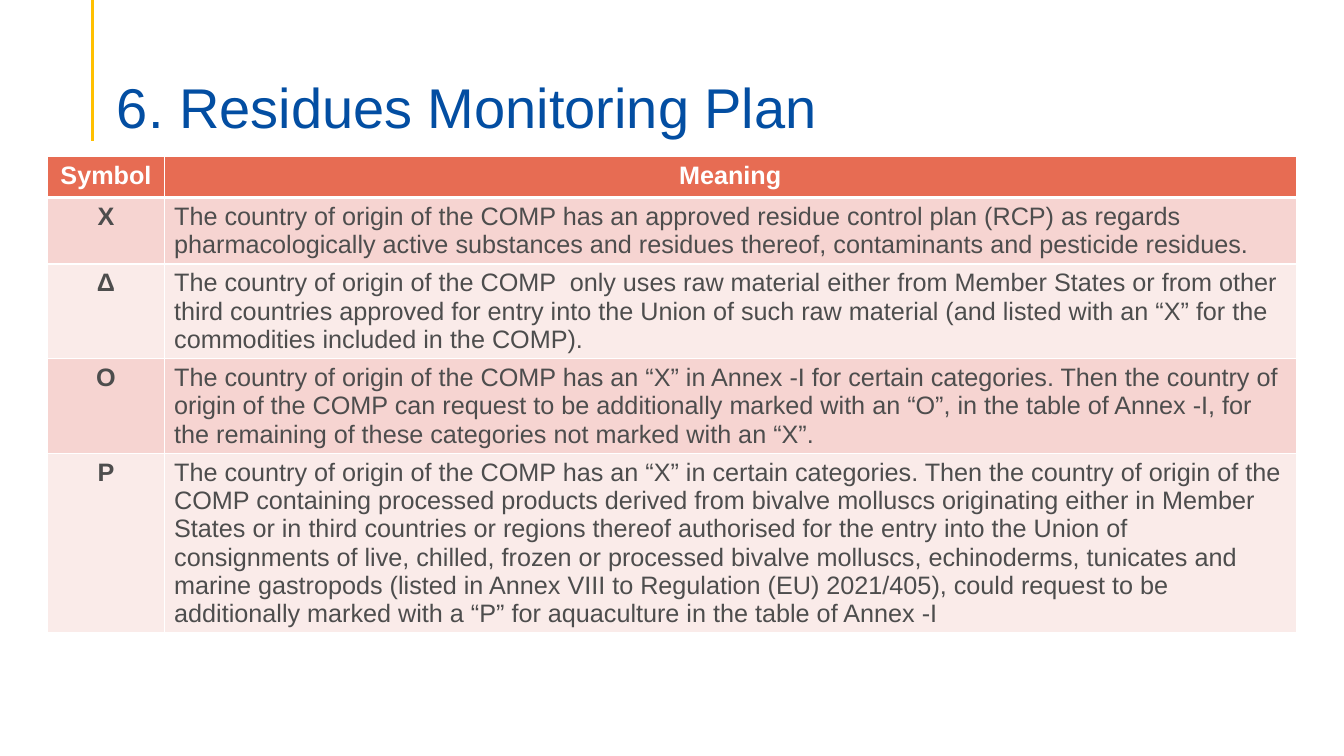
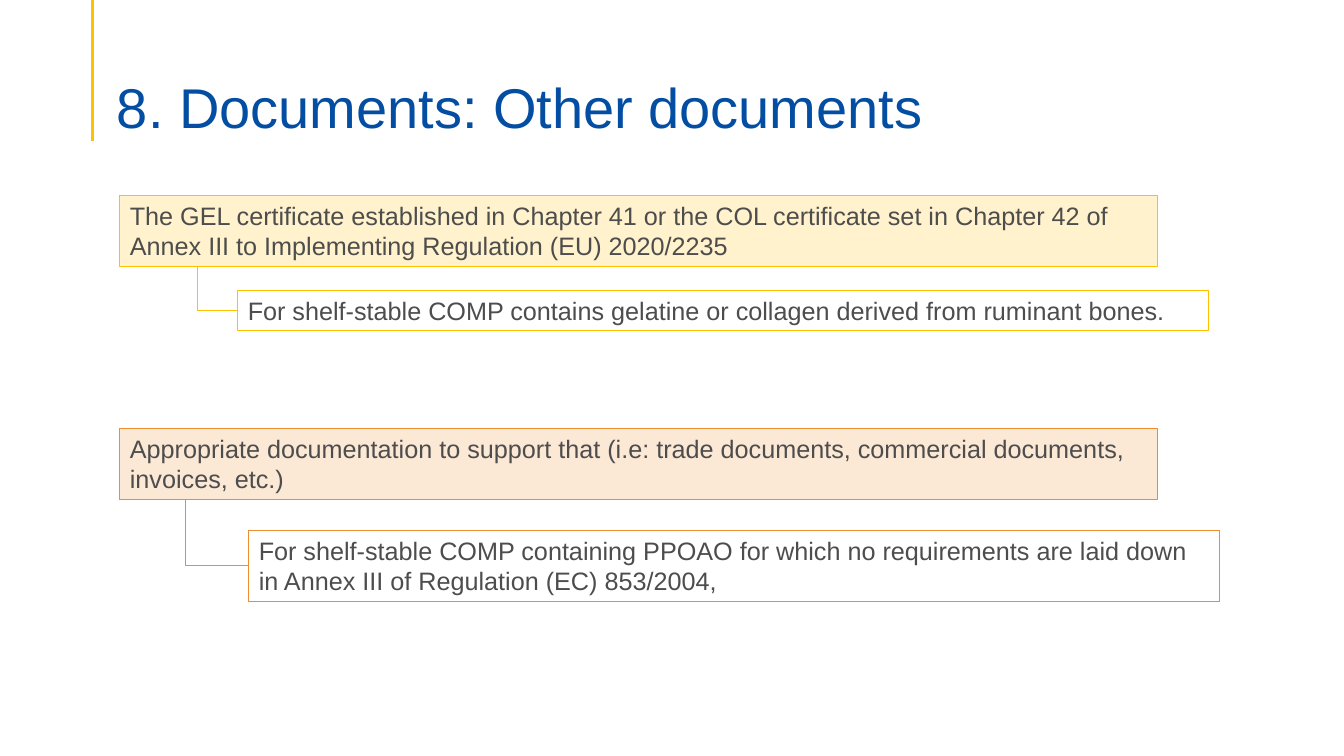
from lxml import etree
from pptx import Presentation
from pptx.dml.color import RGBColor
from pptx.enum.shapes import MSO_CONNECTOR, MSO_SHAPE
from pptx.enum.text import MSO_ANCHOR, MSO_AUTO_SIZE, PP_ALIGN
from pptx.oxml.ns import qn
from pptx.util import Pt

STRAIGHT, ELBOW = MSO_CONNECTOR.STRAIGHT, MSO_CONNECTOR.ELBOW
RECTANGLE = MSO_SHAPE.RECTANGLE
TOP, BOTTOM = MSO_ANCHOR.TOP, MSO_ANCHOR.BOTTOM
FIT_SHAPE, NO_FIT = MSO_AUTO_SIZE.SHAPE_TO_FIT_TEXT, MSO_AUTO_SIZE.NONE
LEFT, CENTER = PP_ALIGN.LEFT, PP_ALIGN.CENTER

COLORS = {
    "title": "034EA2",
    "text": "4D4D4D",
    "white": "FFFFFF",
    "yellow": "FFC000",
    "pale_yellow": "FFF2CC",
    "orange": "ED8D2F",
    "pale_orange": "FBE8D5",
    "header": "E76C53",
    "odd_row": "F6D4D1",
    "even_row": "FAEBE9",
}
TITLE_PLACE = {"left": Pt(76.3), "top": Pt(38.2), "width": Pt(828), "height": Pt(61.9)}
TITLE_FRAME = {"vertical_anchor": BOTTOM, "auto_size": NO_FIT, "word_wrap": True,
               "margin_left": Pt(7.2), "margin_top": Pt(3.6),
               "margin_right": Pt(7.2), "margin_bottom": Pt(0)}
BOX_FRAME = {"vertical_anchor": TOP, "auto_size": FIT_SHAPE, "word_wrap": True}
TITLE_FONT = {"name": "Arial", "size": Pt(40), "bold": False}
BODY_FONT = {"name": "Arial", "size": Pt(18), "bold": False}
STRONG_FONT = {**BODY_FONT, "bold": True}
PLAIN_TABLE = {"first_row": False, "horz_banding": False}

LEAD_LEFT, LEAD_WIDTH, DETAIL_WIDTH = 85.7, 740.9, 693.4
COLUMN_WIDTHS = (83, 808.8)
SYMBOL_ROWS = [
    (29.5, "Symbol", "Meaning"),
    (47, "X", "The country of origin of the COMP has an approved residue control plan (RCP) "
     "as regards pharmacologically active substances and residues thereof, contaminants "
     "and pesticide residues."),
    (67.5, "Δ", "The country of origin of the COMP  only uses raw material either from Member "
     "States or from other third countries approved for entry into the Union of such raw "
     "material (and listed with an “X” for the commodities included in the COMP)."),
    (67.5, "O", "The country of origin of the COMP has an “X” in Annex -I for certain "
     "categories. Then the country of origin of the COMP can request to be additionally "
     "marked with an “O”, in the table of Annex -I, for the remaining of these categories "
     "not marked with an “X”."),
    (128, "P", "The country of origin of the COMP has an “X” in certain categories. Then the "
     "country of origin of the COMP containing processed products derived from bivalve "
     "molluscs originating either in Member States or in third countries or regions thereof "
     "authorised for the entry into the Union of consignments of live, chilled, frozen or "
     "processed bivalve molluscs, echinoderms, tunicates and marine gastropods (listed in "
     "Annex VIII to Regulation (EU) 2021/405), could request to be additionally marked with "
     "a “P” for aquaculture in the table of Annex -I"),
]
DOCUMENTS = [
    {"accent": "yellow", "tint": "pale_yellow", "top": 139.7, "bend": 141.1,
     "detail_place": (169.9, 207.4), "detail_height": 28.8,
     "lead": "The GEL certificate established in Chapter 41 or the COL certificate set in "
             "Chapter 42 of Annex III to Implementing Regulation (EU) 2020/2235",
     "detail": "For shelf-stable COMP contains gelatine or collagen derived from "
               "ruminant bones."},
    {"accent": "orange", "tint": "pale_orange", "top": 306, "bend": 132.5,
     "detail_place": (177.8, 378.7), "detail_height": 50.9,
     "lead": "Appropriate documentation to support that (i.e: trade documents, commercial "
             "documents, invoices, etc.)",
     "detail": "For shelf-stable COMP containing PPOAO for which no requirements are laid "
               "down in Annex III of Regulation (EC) 853/2004,"},
]


def rgb(name):
    """Return the palette colour with this name."""
    return RGBColor.from_string(COLORS[name])


def apply_format(target, values):
    """Set every attribute in values on target."""
    for attribute, value in values.items():
        setattr(target, attribute, value)


def write(frame, text, font, color, align=LEFT):
    """Write one formatted paragraph into a text frame."""
    frame.text = text
    paragraph = frame.paragraphs[0]
    paragraph.alignment = align
    run = paragraph.runs[0]
    apply_format(run.font, font)
    run.font.color.rgb = rgb(color)
    return paragraph


def add_line(slide, kind, start, end, color, weight):
    """Draw a connector without shadow between two points."""
    line = slide.shapes.add_connector(kind, *map(Pt, start + end))
    line.line.color.rgb = rgb(color)
    line.line.width = Pt(weight)
    etree.SubElement(line.element.spPr, qn("a:effectLst"))
    return line


def style_layout(layout, slide):
    """Give the layout its title place and the yellow rule."""
    title = layout.placeholders[0]
    apply_format(title, TITLE_PLACE)
    apply_format(title.text_frame, TITLE_FRAME)
    rule = add_line(slide, STRAIGHT, (66.2, 0), (66.2, 100.8), "yellow", 2.25)
    rule.element[0][0].set("id", "20")
    layout.shapes.element.append(rule.element)


def add_titled_slide(deck, layout, heading):
    """Add a slide with a formatted title."""
    slide = deck.slides.add_slide(layout)
    title = write(slide.shapes.title.text_frame, heading, TITLE_FONT, "title")
    title.line_spacing = 0.9
    return slide


def set_borders(cell, top, bottom):
    """Give a cell white borders, with its own top and bottom weight."""
    properties = cell._tc.get_or_add_tcPr()
    weights = {"a:lnL": 1, "a:lnR": 1, "a:lnT": top, "a:lnB": bottom}
    for position, (side, weight) in enumerate(weights.items()):
        border = etree.Element(qn(side), w=str(Pt(weight)))
        fill = etree.SubElement(border, qn("a:solidFill"))
        etree.SubElement(fill, qn("a:srgbClr"), val=COLORS["white"])
        properties.insert(position, border)


def fill_cell(cell, text, row, column):
    """Fill one cell of the symbol table."""
    header = row == 0
    symbol = column == 0
    background = "header" if header else "odd_row" if row % 2 else "even_row"
    write(cell.text_frame, text,
          STRONG_FONT if header or symbol else BODY_FONT,
          "white" if header else "text",
          CENTER if header or symbol else LEFT)
    cell.fill.solid()
    cell.fill.fore_color.rgb = rgb(background)
    set_borders(cell, 3 if row == 1 else 1, 3 if header else 1)


def add_symbol_table(slide):
    """Add the table of symbols and their meanings."""
    height = sum(row[0] for row in SYMBOL_ROWS)
    table = slide.shapes.add_table(
        len(SYMBOL_ROWS), len(COLUMN_WIDTHS),
        Pt(34.2), Pt(111.6), Pt(sum(COLUMN_WIDTHS)), Pt(height)).table
    apply_format(table, PLAIN_TABLE)
    for column, width in zip(table.columns, COLUMN_WIDTHS):
        column.width = Pt(width)
    for row, (row_height, *texts) in enumerate(SYMBOL_ROWS):
        table.rows[row].height = Pt(row_height)
        for column, text in enumerate(texts):
            fill_cell(table.cell(row, column), text, row, column)


def add_box(slide, place, size, text, accent, tint=None):
    """Add an outlined text rectangle, tinted if a tint is given."""
    box = slide.shapes.add_shape(RECTANGLE, *map(Pt, place + size))
    box.shadow.inherit = False
    if tint:
        box.fill.solid()
        box.fill.fore_color.rgb = rgb(tint)
    else:
        box.fill.background()
    box.line.color.rgb = rgb(accent)
    box.line.width = Pt(0.75)
    apply_format(box.text_frame, BOX_FRAME)
    write(box.text_frame, text, BODY_FONT, "text")


def add_document(slide, document):
    """Add a document box with its detail box and the elbow between them."""
    accent, lead_height = document["accent"], 50.9
    detail_left, detail_top = document["detail_place"]
    add_box(slide, (LEAD_LEFT, document["top"]), (LEAD_WIDTH, lead_height),
            document["lead"], accent, document["tint"])
    add_box(slide, document["detail_place"], (DETAIL_WIDTH, document["detail_height"]),
            document["detail"], accent)
    start = (2 * document["bend"] - detail_left, document["top"] + lead_height)
    end = (detail_left, detail_top + document["detail_height"] / 2)
    add_line(slide, ELBOW, start, end, accent, 0.5)


def main():
    """Build and save the deck."""
    deck = Presentation()
    apply_format(deck, {"slide_width": Pt(960), "slide_height": Pt(540)})
    layout = deck.slide_layouts[5]
    residues = add_titled_slide(deck, layout, "6. Residues Monitoring Plan")
    style_layout(layout, residues)
    add_symbol_table(residues)
    documents = add_titled_slide(deck, layout, "8. Documents: Other documents")
    for document in DOCUMENTS:
        add_document(documents, document)
    deck.save("out.pptx")


if __name__ == "__main__":
    main()
